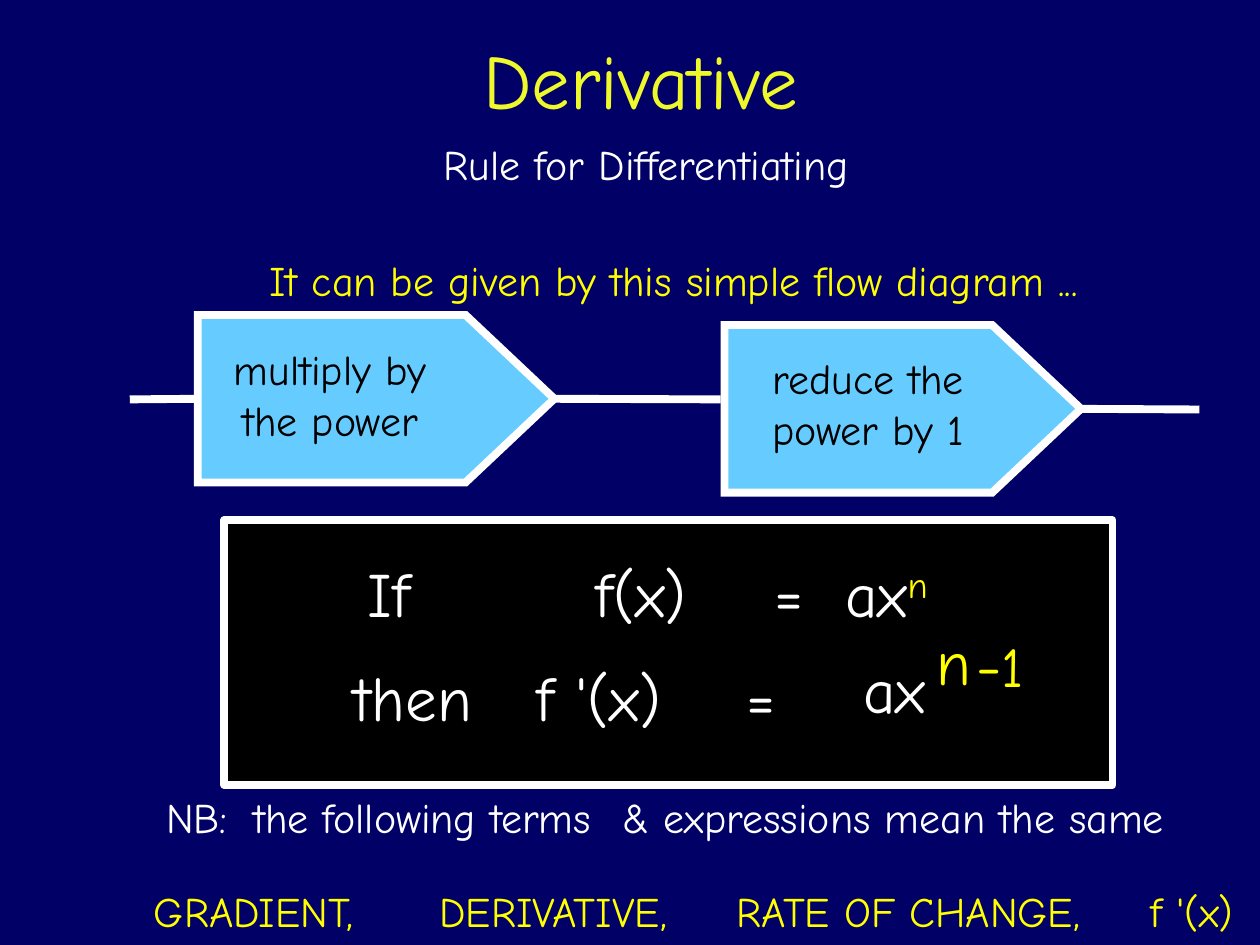
from dataclasses import dataclass

from lxml import etree
from pptx import Presentation
from pptx import util as u
from pptx.dml.color import RGBColor
from pptx.enum import shapes, text
from pptx.oxml.ns import qn


@dataclass(frozen=True)
class Theme:
    font: str = "Comic Neue"
    background: str = "000066"
    title: str = "EEF82A"
    accent: str = "FFFF00"
    light: str = "FFFFFF"
    dark: str = "000000"
    step: str = "66CCFF"
    title_size: int = 44
    formula_size: int = 36
    digit_size: int = 32
    text_size: int = 24
    stroke: float = 4.5


THEME = Theme()
STEP_SIZE = (2.83, 1.33)
TERMS_TOP = 6.98


def rgb(colour):
    return RGBColor.from_string(colour)


def inches(*lengths):
    return [u.Inches(length) for length in lengths]


def set_font(font, colour, size):
    font.name = THEME.font
    font.size = u.Pt(size)
    font.color.rgb = rgb(colour)


def add_label(slide, wording, box, colour, size=THEME.text_size, tabs=()):
    """Add a centred label, or a left-aligned one with tab stops in inches."""
    frame = slide.shapes.add_textbox(*inches(*box)).text_frame
    frame.word_wrap = True
    paragraph = frame.paragraphs[0]
    paragraph.text = wording
    paragraph.alignment = text.PP_ALIGN.LEFT if tabs else text.PP_ALIGN.CENTER
    if tabs:
        properties = paragraph._p.get_or_add_pPr()
        stops = etree.SubElement(properties, qn("a:tabLst"))
        for position in tabs:
            etree.SubElement(stops, qn("a:tab"), pos=str(u.Inches(position)), algn="l")
    set_font(paragraph.font, colour, size)
    return paragraph


def add_panel(slide, preset, box, fill):
    panel = slide.shapes.add_shape(preset, *inches(*box))
    panel.shadow.inherit = False
    panel.fill.solid()
    panel.fill.fore_color.rgb = rgb(fill)
    panel.line.color.rgb = rgb(THEME.light)
    panel.line.width = u.Pt(THEME.stroke)
    return panel


def add_step(slide, left, top):
    step = add_panel(slide, shapes.MSO_SHAPE.PENTAGON, (left, top, *STEP_SIZE), THEME.step)
    step.adjustments[0] = 0.53
    etree.SubElement(step.line._get_or_add_ln(), qn("a:miter"), lim="800000")
    return step


def add_flow_line(slide, start, end, y):
    line = slide.shapes.add_connector(
        shapes.MSO_CONNECTOR.STRAIGHT, *inches(start, y, end, y))
    line.line.color.rgb = rgb(THEME.light)
    line.line.width = u.Pt(THEME.stroke)
    etree.SubElement(line._element.spPr, qn("a:effectLst"))
    return line


def add_title(slide, wording):
    title = slide.shapes.title
    title.left, title.top, title.width, title.height = inches(1.15, 0.21, 7.87, 1.25)
    title.text_frame.text = wording
    title.text_frame.vertical_anchor = text.MSO_ANCHOR.TOP
    paragraph = title.text_frame.paragraphs[0]
    paragraph.alignment = text.PP_ALIGN.CENTER
    set_font(paragraph.font, THEME.title, THEME.title_size)


def add_flow(slide):
    multiply = add_step(slide, 1.57, 2.5)
    reduce = add_step(slide, 5.75, 2.58)
    add_flow_line(slide, 1.03, 1.57, 3.17).end_connect(multiply, 1)
    add_flow_line(slide, 4.4, 5.72, 3.17).begin_connect(multiply, 3)
    add_flow_line(slide, 8.58, 9.52, 3.25).begin_connect(reduce, 3)
    add_label(slide, "multiply by the power", (1.58, 2.68, 2.08, 0.91), THEME.dark)
    add_label(slide, "reduce the power by 1", (5.68, 2.75, 2.42, 0.91), THEME.dark)


def add_rule(slide):
    size = THEME.formula_size
    add_panel(slide, shapes.MSO_SHAPE.RECTANGLE, (1.78, 4.13, 7.05, 2.1), THEME.dark)
    function = add_label(slide, "If\tf(x)\t=\tax", (2.82, 4.35, 5.15, 0.71),
                         THEME.light, size, tabs=(1.81, 3.23, 3.79))
    power = function.add_run()
    power.text = "n"
    power.font.color.rgb = rgb(THEME.accent)
    power.font._element.set("baseline", "30000")

    add_label(slide, "then\tf '(x)\t=", (2.71, 5.18, 5.55, 0.71),
              THEME.light, size, tabs=(1.45, 3.12))
    add_label(slide, "ax", (6.22, 5.11, 1.76, 0.71), THEME.light, size)
    add_label(slide, "n", (7.22, 4.89, 0.7, 0.71), THEME.accent, size)
    reduction = add_label(slide, "-", (7.43, 4.91, 1.02, 0.71), THEME.accent, size)
    one = reduction.add_run()
    one.text = "1"
    one.font.size = u.Pt(THEME.digit_size)


def add_terms(slide):
    add_label(slide, "NB:\tthe following terms\t& expressions mean the same",
              (1.22, 6.23, 8.7, 0.51), THEME.light, tabs=(0.69, 3.62))
    for term, left, width in (("GRADIENT,", 0.6, 2.83), ("DERIVATIVE,", 2.85, 3.08),
                              ("RATE OF CHANGE,", 5.25, 3.92), ("f '(x)", 8.92, 1.08)):
        add_label(slide, term, (left, TERMS_TOP, width, 0.51), THEME.accent)


def main():
    deck = Presentation()
    deck.slide_width, deck.slide_height = inches(10, 7.5)
    slide = deck.slides.add_slide(deck.slide_layouts[5])
    slide.background.fill.solid()
    slide.background.fill.fore_color.rgb = rgb(THEME.background)

    add_title(slide, "Derivative")
    add_label(slide, "Rule for Differentiating", (2.33, 1.05, 5.6, 0.51), THEME.light)
    add_label(slide, "It can be given by this simple flow diagram ...",
              (0.97, 1.97, 8.75, 0.51), THEME.accent)
    add_flow(slide)
    add_rule(slide)
    add_terms(slide)
    deck.save("out.pptx")


if __name__ == "__main__":
    main()
